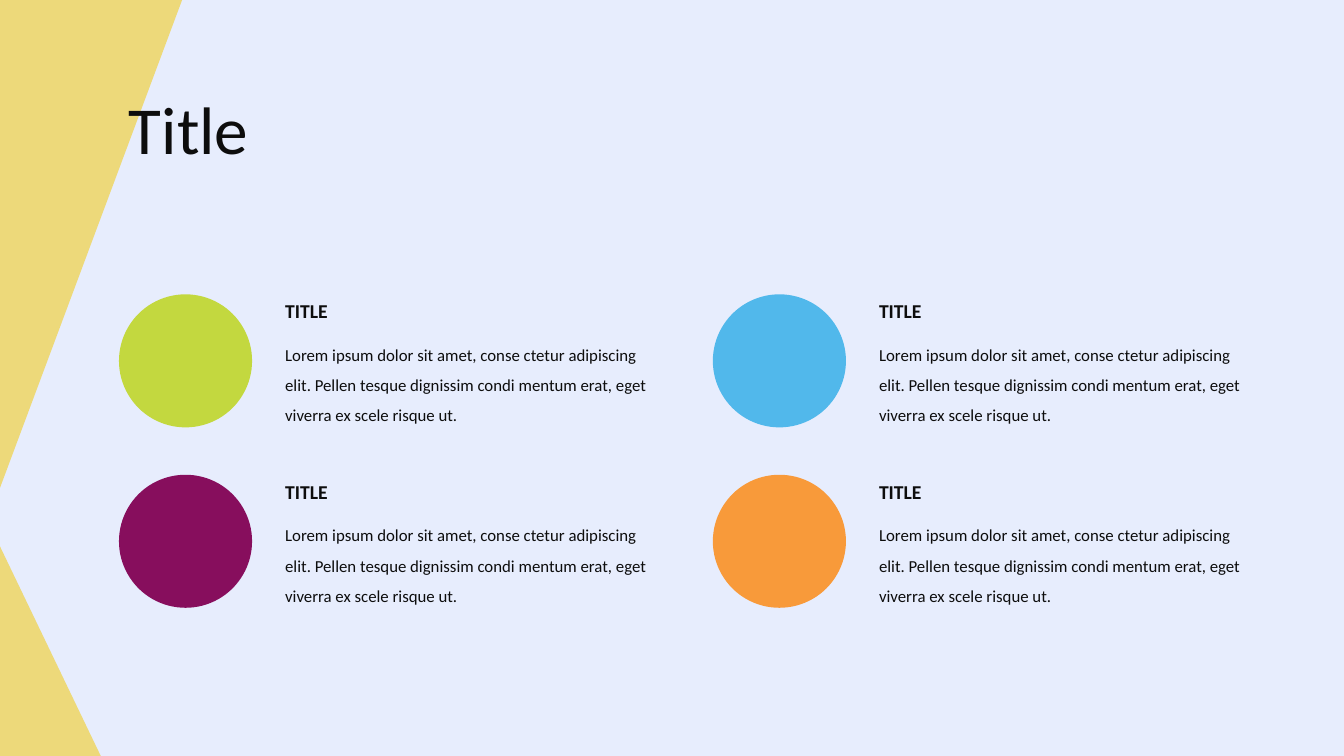
import pptx
import pptx.util
import pptx.dml.color
import pptx.enum.shapes
import pptx.enum.text

Inches = pptx.util.Inches
Shape = pptx.enum.shapes.MSO_SHAPE

deck = pptx.Presentation()
deck.slide_width, deck.slide_height = Inches(13.33), Inches(7.5)
slide = deck.slides.add_slide(deck.slide_layouts[6])


def paint(fill, color):
    fill.solid()
    fill.fore_color.rgb = pptx.dml.color.RGBColor.from_string(color)


def write(text, left, top, width, height, size, bold=False, spacing=1.0):
    box = slide.shapes.add_textbox(Inches(left), Inches(top), Inches(width), Inches(height))
    box.text_frame.word_wrap = True
    box.text_frame.auto_size = pptx.enum.text.MSO_AUTO_SIZE.SHAPE_TO_FIT_TEXT
    paragraph = box.text_frame.paragraphs[0]
    paragraph.line_spacing = spacing
    run = paragraph.add_run()
    run.text = text
    run.font.name = "Calibri"
    run.font.size = pptx.util.Pt(size)
    run.font.bold = bold
    paint(run.font.fill, "0D0D0D")


# Background and the two corner triangles
paint(slide.background.fill, "E7EDFD")
for top, width, height, flipped in [(5.42, 1, 2.08, False), (-0.01, 1.81, 4.85, True)]:
    corner = slide.shapes.add_shape(
        Shape.RIGHT_TRIANGLE, 0, Inches(top), Inches(width), Inches(height))
    corner.shadow.inherit = False
    paint(corner.fill, "EDD97A")
    corner.line.fill.background()
    if flipped:
        corner._element.spPr.xfrm.set("flipV", "1")

# Heading
write("Title", 1.18, 0.82, 3.29, 0.91, size=48)

# Two by two grid: a circle, a heading and a description in each cell
circle_colors = [["C3D83F", "51B8EB"], ["870E5D", "F89A3A"]]
description = ("Lorem ipsum dolor sit amet, conse ctetur adipiscing elit. Pellen tesque "
               "dignissim condi mentum erat, eget viverra ex scele risque ut.")
for row, row_colors in enumerate(circle_colors):
    for column, color in enumerate(row_colors):
        left = 1.18 + 5.89 * column
        top = 2.92 + 1.79 * row
        circle = slide.shapes.add_shape(
            Shape.OVAL, Inches(left), Inches(top), Inches(1.32), Inches(1.32))
        circle.shadow.inherit = False
        paint(circle.fill, color)
        circle.line.fill.background()
        write("TITLE", left + 1.55, top, 1.46, 0.34, size=14, bold=True)
        write(description, left + 1.55, top + 0.35, 3.94, 1.01, size=12, spacing=1.5)

deck.save("out.pptx")
